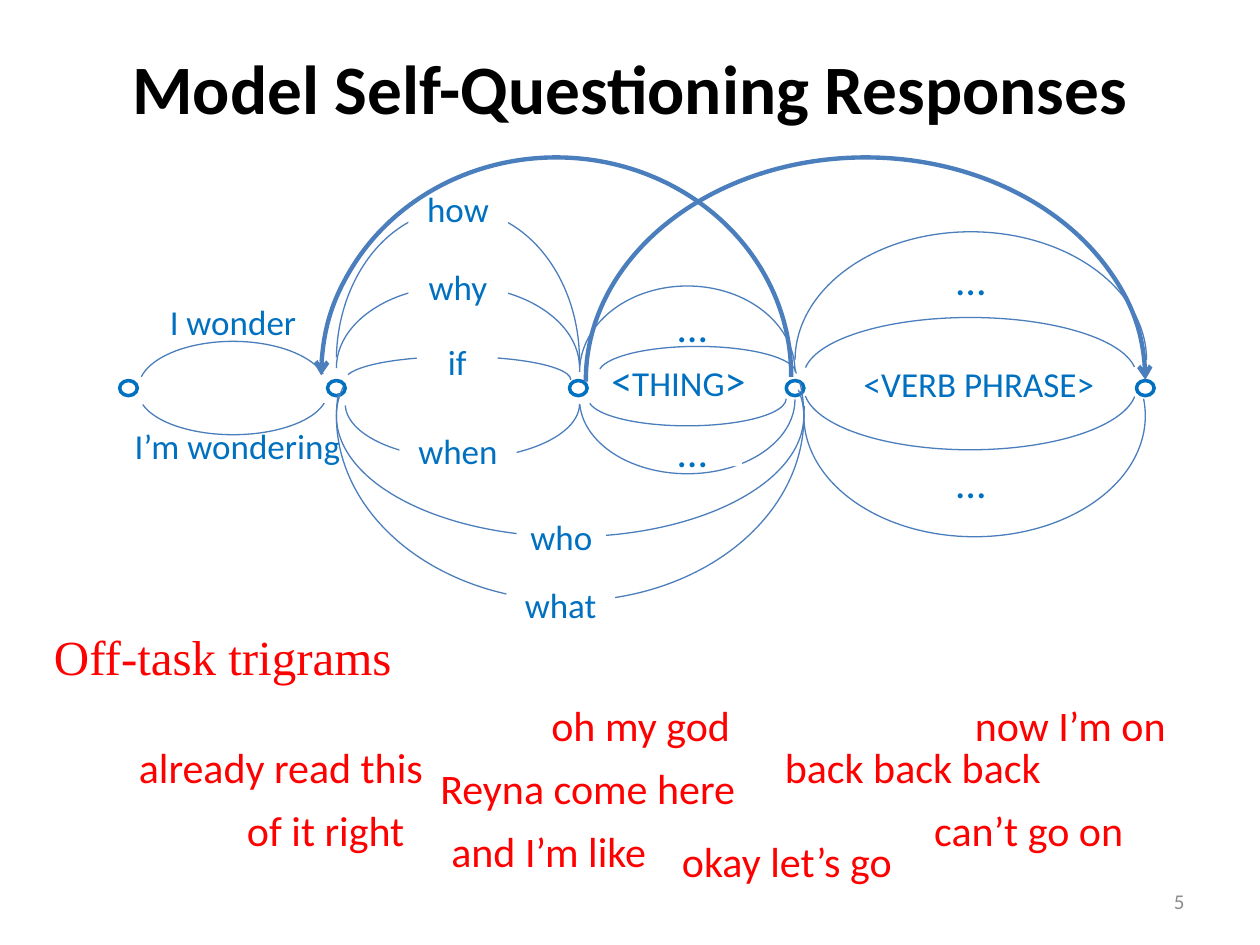
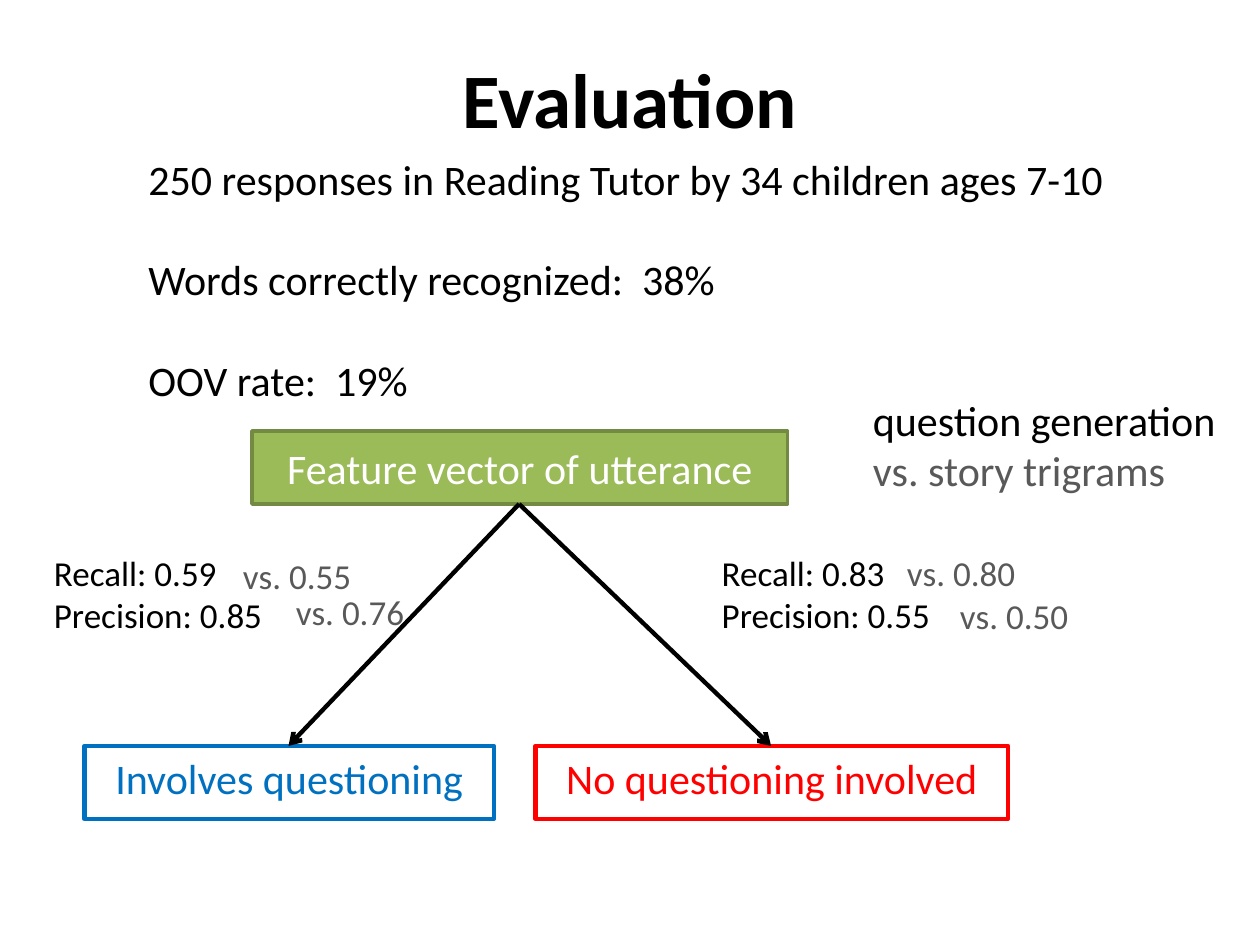
from lxml import etree
from pptx import Presentation
from pptx import util as u
from pptx.dml.color import RGBColor
from pptx.enum import shapes, text
from pptx.oxml import ns

COLORS = {
    "black": "000000", "white": "FFFFFF", "gray": "595959", "number": "8C8C8C",
    "red": "FF0000", "blue": "0070C0", "arc": "4B7EBC",
    "green": "9BBB59", "olive": "738A42",
}
LEFT, CENTER, RIGHT = text.PP_ALIGN.LEFT, text.PP_ALIGN.CENTER, text.PP_ALIGN.RIGHT
TOP, MIDDLE = text.MSO_ANCHOR.TOP, text.MSO_ANCHOR.MIDDLE
RECT, OVAL, ARC = (shapes.MSO_SHAPE.RECTANGLE, shapes.MSO_SHAPE.OVAL,
                   shapes.MSO_SHAPE.ARC)


def rgb(name):
    return RGBColor.from_string(COLORS[name])


class Deck:
    """Holds the style and the current slide."""
    font = "Calibri"

    def __init__(self):
        self.prs = Presentation()
        self.prs.slide_width, self.prs.slide_height = u.Inches(10), u.Inches(7.5)
        self.s = None

    def new_slide(self, title, height, size):
        self.s = self.prs.slides.add_slide(self.prs.slide_layouts[6])
        self.textbox((0.5, 0.3, 9, height), [[(title, size, "black")]],
                     align=CENTER, anchor=MIDDLE, bold=True)

    def add_text(self, sp, paragraphs, align=LEFT, anchor=TOP, wrap=True,
                 font=None, bold=False, before=0, after=0, side=0.1):
        """Each paragraph is a list of (text, size, colour) runs."""
        tf = sp.text_frame
        tf.word_wrap, tf.vertical_anchor = wrap, anchor
        tf.margin_left = tf.margin_right = u.Inches(side)
        for i, runs in enumerate(paragraphs):
            p = tf.add_paragraph() if i else tf.paragraphs[0]
            p.alignment = align
            p.space_before = u.Pt(before if i else 0)
            p.space_after = u.Pt(after)
            for words, size, color in runs:
                r = p.add_run()
                r.text = words
                r.font.name, r.font.size = font or self.font, u.Pt(size)
                r.font.bold, r.font.color.rgb = bold, rgb(color)

    def textbox(self, box, paragraphs, **style):
        sp = self.s.shapes.add_textbox(*map(u.Inches, box))
        self.add_text(sp, paragraphs, **style)

    def line_style(self, sp, color, width, arrow=False):
        sp.line.color.rgb, sp.line.width = rgb(color), u.Pt(width)
        if arrow:
            ln = sp.element.spPr.find(ns.qn("a:ln"))
            etree.SubElement(ln, ns.qn("a:tailEnd"), type="arrow")

    def shape(self, kind, box, fill=None, line=None, width=1, arrow=False):
        sp = self.s.shapes.add_shape(kind, *map(u.Inches, box))
        sp.shadow.inherit = False
        if fill:
            sp.fill.solid()
            sp.fill.fore_color.rgb = rgb(fill)
        else:
            sp.fill.background()
        if line:
            self.line_style(sp, line, width, arrow)
        else:
            sp.line.fill.background()
        return sp

    def arc(self, box, start, end=0, flip=None, width=0.75, arrow=False):
        """Angles count 0.6 to the degree, so 108 is the left end."""
        sp = self.shape(ARC, box, line="arc", width=width, arrow=arrow)
        sp.adjustments[0], sp.adjustments[1] = start, end
        if flip:
            sp.element.spPr.find(ns.qn("a:xfrm")).set(flip, "1")

    def label(self, box, words, size=20):
        """A white patch with a word, which breaks the arc behind it."""
        sp = self.shape(RECT, box, fill="white")
        self.add_text(sp, [[(words, size, "blue")]],
                      align=CENTER, anchor=MIDDLE, side=0)

    def arrow(self, start, end):
        sp = self.s.shapes.add_connector(
            shapes.MSO_CONNECTOR.STRAIGHT, *map(u.Inches, (*start, *end)))
        self.line_style(sp, "black", 2.5, arrow=True)
        etree.SubElement(sp.element.spPr, ns.qn("a:effectLst"))


def model_slide(d):
    d.new_slide("Model Self-Questioning Responses", 0.78, 39.6)

    # Off-task utterances
    for words, x, y, w in [
        ("and I’m like", 3, 6.42, 2.71), ("back back back", 5.83, 5.75, 2.83),
        ("can’t go on", 6.75, 6.25, 2.83), ("now I’m on", 7.08, 5.42, 2.83),
        ("of it right", 1.17, 6.25, 2.83), ("okay let’s go", 4.83, 6.5, 2.83),
        ("already read this", 0.75, 5.75, 2.96), ("oh my god", 3.67, 5.42, 2.83),
        ("Reyna come here", 3, 5.92, 3.33),
    ]:
        d.textbox((x, y, w, 0.67), [[(words, 24, "red")]], align=CENTER, anchor=MIDDLE)

    # States and the plain labels between them
    for x in (0.95, 2.6, 4.52, 6.24, 9.02):
        d.shape(OVAL, (x, 3.02, 0.14, 0.12), line="blue", width=2)
    for box, runs in [
        ((4.67, 2.89, 1.43, 0.25), [("<", 24), ("THING", 20), (">", 24)]),
        ((1.1, 2.4, 1.5, 0.31), [("I wonder", 20)]),
        ((0.67, 3.26, 2.43, 0.56), [("I’m wondering", 20)]),
        ((6.52, 2.83, 2.5, 0.43), [("<VERB PHRASE>", 20)]),
    ]:
        d.textbox(box, [[(words, size, "blue") for words, size in runs]],
                  align=CENTER, anchor=MIDDLE)

    # Opening and question-word arcs
    for box, start, end, flip in [
        ((2.67, 1.66, 1.93, 2.41), 109, 0.63, None),
        ((1.1, 2.71, 1.5, 0.74), 112.17, 210.73, None),
        ((1.1, 2.77, 1.5, 0.68), 112.8, 211.83, "flipV"),
        ((2.67, 1.84, 3.71, 2.93), 104.54, 5.09, "flipV"),
        ((2.67, 2.27, 1.93, 1.3), 107.92, 0, None),
        ((2.74, 2.83, 1.79, 0.37), 109.61, 0, None),
        ((2.74, 2.77, 1.86, 0.87), 108.51, 0, "flipV"),
        ((2.67, 2.34, 3.71, 1.92), 103.64, 3.91, "flipV"),
    ]:
        d.arc(box, start, end, flip)
    for words, x, y, w, h in [
        ("how", 3.24, 1.53, 0.79, 0.25), ("why", 3.24, 2.15, 0.79, 0.25),
        ("if", 3.31, 2.77, 0.64, 0.19), ("when", 3.17, 3.45, 0.93, 0.25),
        ("who", 4.1, 4.13, 0.71, 0.25), ("what", 4.02, 4.67, 0.86, 0.25),
    ]:
        d.label((x, y, w, h), words)

    # Thing and verb-phrase arcs
    for box, start, end, flip in [
        ((4.6, 2.27, 1.71, 1.36), 107.92, 0, None),
        ((4.75, 2.75, 1.57, 0.43), 109.61, 0, None),
        ((4.67, 2.95, 1.57, 0.43), 109.61, 0, "flipV"),
        ((4.6, 2.58, 1.71, 1.18), 109.61, 0, "flipV"),
        ((6.38, 2.52, 2.64, 0.93), 109.78, 214.08, None),
        ((6.38, 2.58, 2.64, 0.99), 109.78, 214.08, "flipV"),
        ((6.31, 1.84, 2.79, 2.04), 108.11, 0, None),
        ((6.38, 2.34, 2.71, 1.92), 106.03, 3.48, "flipV"),
    ]:
        d.arc(box, start, end, flip)
    for x, y in [(5.1, 2.46), (5.1, 3.45), (7.31, 2.09), (7.31, 3.7)]:
        d.label((x, y, 0.79, 0.25), "…", 24)

    # Skip and repeat arrows
    d.arc((2.55, 1.25, 3.73, 3.46), 107.77, flip="flipH", width=2.5, arrow=True)
    d.arc((4.65, 1.25, 4.44, 3.53), 107.77, width=2.5, arrow=True)

    # Slide number and trigram heading
    d.textbox((7.17, 6.95, 2.33, 0.4), [[("5", 12, "number")]],
              align=RIGHT, anchor=MIDDLE)
    d.textbox((0.33, 4.92, 2.91, 0.57), [[("Off-task trigrams", 28, "red")]],
              wrap=False, font="Times New Roman")


def evaluation_slide(d):
    d.new_slide("Evaluation", 0.95, 44)

    # Classifier boxes and arrows
    for x, y, w, words, fill, line, width, color, anchor, after in [
        (0.67, 5.92, 3.25, "Involves questioning",
         "white", "blue", 2.5, "blue", TOP, 10),
        (4.25, 5.92, 3.75, "No questioning involved",
         "white", "red", 2.5, "red", TOP, 10),
        (2, 3.42, 4.25, "Feature vector of utterance",
         "green", "olive", 2, "white", MIDDLE, 0),
    ]:
        sp = d.shape(RECT, (x, y, w, 0.58), fill, line, width)
        d.add_text(sp, [[(words, 24, color)]], align=CENTER, anchor=anchor, after=after)
    for x in (2.29, 6.12):
        d.arrow((4.12, 4), (x, 5.92))

    # Scores, each with its baseline in gray
    for x, recall, precision in [(0.33, "0.59", "0.85"), (5.63, "0.83", "0.55")]:
        d.textbox((x, 4.33, 1.87, 0.77),
                  [[(f"Recall: {recall}", 20, "black")],
                   [(f"Precision: {precision}", 20, "black")]], wrap=False)
    for x, y, w, score in [(1.83, 4.35, 1.67, "0.55"), (2.25, 4.64, 2.17, "0.76"),
                           (7.1, 4.33, 1.56, "0.80"), (7.52, 4.67, 1.4, "0.50")]:
        d.textbox((x, y, w, 0.44), [[(f"vs. {score}", 20, "gray")]])
    d.textbox((6.83, 3.08, 3.03, 0.91),
              [[("question generation", 24, "black")],
               [("vs. story trigrams", 24, "gray")]], wrap=False)

    # Data summary
    facts = ["250 responses in Reading Tutor by 34 children ages 7-10",
             "Words correctly recognized:  38%", "OOV rate:  19%"]
    d.textbox((1.08, 1.17, 8.92, 2.12), [[(fact, 24, "black")] for fact in facts],
              before=28.5)


def main():
    d = Deck()
    model_slide(d)
    evaluation_slide(d)
    d.prs.save("out.pptx")


if __name__ == "__main__":
    main()
